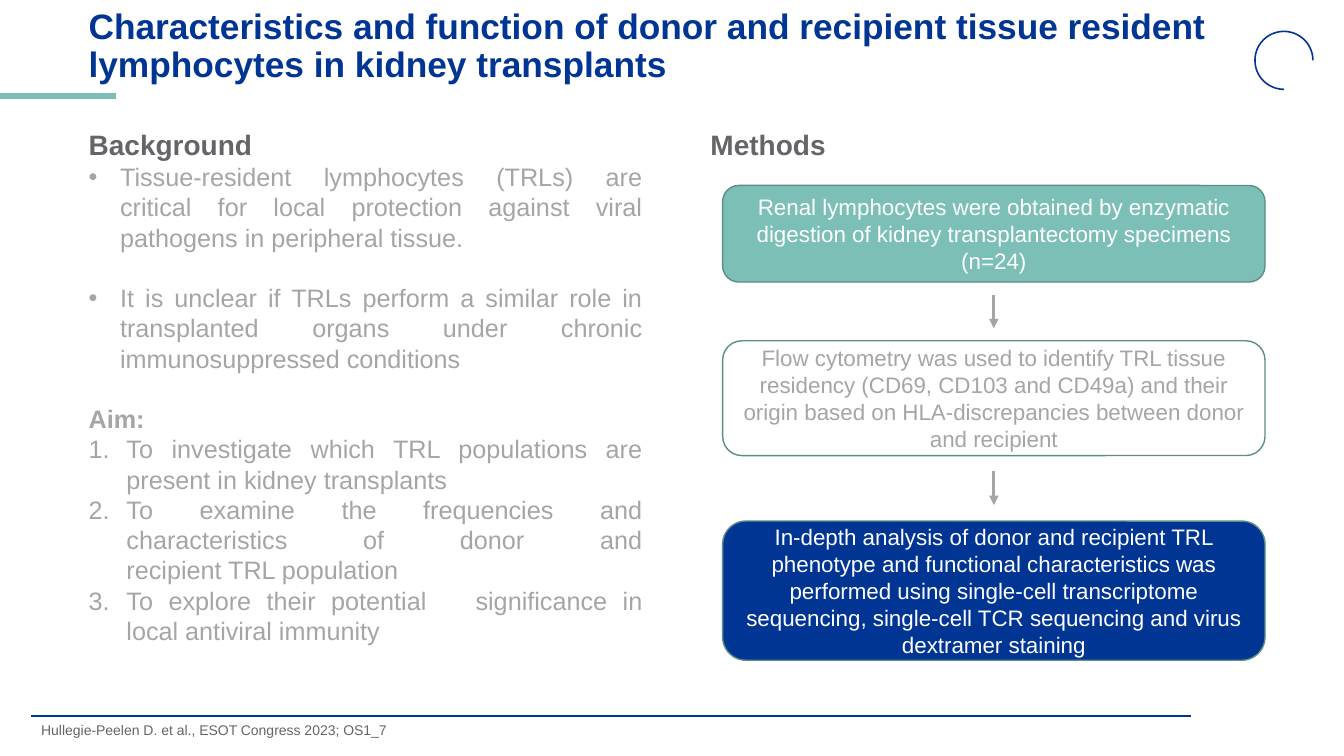
from lxml import etree
from pptx import Presentation
from pptx.dml.color import RGBColor
from pptx.enum.shapes import MSO_CONNECTOR, MSO_SHAPE
from pptx.enum.text import MSO_ANCHOR, PP_ALIGN
from pptx.oxml.ns import qn
from pptx.util import Pt

STRAIGHT = MSO_CONNECTOR.STRAIGHT
ARC, ROUNDED = MSO_SHAPE.ARC, MSO_SHAPE.ROUNDED_RECTANGLE
TOP, MIDDLE = MSO_ANCHOR.TOP, MSO_ANCHOR.MIDDLE
LEFT, CENTER, JUSTIFY = PP_ALIGN.LEFT, PP_ALIGN.CENTER, PP_ALIGN.JUSTIFY

NAVY, TEAL, EDGE = "003594", "7CBFB6", "5C8D87"
DARK, GREY, WHITE = "636569", "A5A5A5", "FFFFFF"

HEADING = {"size": Pt(20), "bold": True}
BODY = {"size": Pt(18), "bold": False}
BLANK_LINE = 21.6

# text, bullet kind, hanging indent, space before
BACKGROUND = [
    ("Tissue-resident lymphocytes (TRLs) are critical for local protection "
     "against viral pathogens in peripheral tissue.", "dot", 22.5, 0),
    ("It is unclear if TRLs perform a similar role in transplanted organs "
     "under chronic immunosuppressed conditions", "dot", 22.5, BLANK_LINE),
    ("Aim:", None, 0, BLANK_LINE),
    ("To investigate which TRL populations are present in kidney transplants",
     "number", 27, 0),
    ("To examine the frequencies and characteristics of donor and\v"
     "recipient TRL population", "number", 27, 0),
    ("To explore their potential \tsignificance in local antiviral immunity",
     "number", 27, 0),
]

# text, top, height, fill, text colour
METHODS = [
    ("Renal lymphocytes were obtained by enzymatic digestion of kidney "
     "transplantectomy specimens (n=24)", 132.5, 69, TEAL, WHITE),
    ("Flow cytometry was used to identify TRL tissue residency (CD69, CD103 "
     "and CD49a) and their origin based on HLA-discrepancies between donor "
     "and recipient", 243.4, 82, None, GREY),
    ("In-depth analysis of donor and recipient TRL phenotype and functional "
     "characteristics was performed using single-cell transcriptome "
     "sequencing, single-cell TCR sequencing and virus dextramer staining",
     372.2, 99.4, NAVY, WHITE),
]


def rgb(value):
    return RGBColor.from_string(value)


def write(p, text, color, fmt, align=LEFT):
    p.text = text
    p.alignment = align
    for r in p.runs:
        r.font.name = "Arial"
        r.font.color.rgb = rgb(color)
        for name, value in fmt.items():
            setattr(r.font, name, value)


def add_text(s, box, text, color, fmt, anchor=TOP):
    tf = s.shapes.add_textbox(*map(Pt, box)).text_frame
    tf.word_wrap = True
    tf.vertical_anchor = anchor
    write(tf.paragraphs[0], text, color, fmt)
    return tf


def add_line(s, start, end, color, width, arrow=False):
    line = s.shapes.add_connector(STRAIGHT, *map(Pt, start + end))
    line.line.color.rgb = rgb(color)
    line.line.width = Pt(width)
    if arrow:
        etree.SubElement(line.line._get_or_add_ln(), qn("a:tailEnd"), type="triangle")
    etree.SubElement(line._element.spPr, qn("a:effectLst"))


def add_outlined(s, kind, box, fill, color, width):
    sp = s.shapes.add_shape(kind, *map(Pt, box))
    sp.shadow.inherit = False
    if fill:
        sp.fill.solid()
        sp.fill.fore_color.rgb = rgb(fill)
    else:
        sp.fill.background()
    sp.line.color.rgb = rgb(color)
    sp.line.width = Pt(width)
    return sp


def add_bullet(p, kind, indent):
    pPr = p._p.get_or_add_pPr()
    pPr.set("marL", str(Pt(indent)))
    pPr.set("indent", str(-Pt(indent)))
    if kind == "dot":
        etree.SubElement(pPr, qn("a:buFont"), typeface="Arial")
        etree.SubElement(pPr, qn("a:buChar"), char="•")
    else:
        etree.SubElement(pPr, qn("a:buAutoNum"), type="arabicPeriod")


def header(s, box, title):
    left, top, width, height = box
    tf = add_text(s, box, title, NAVY, {"size": Pt(25.2), "bold": True}, MIDDLE)
    tf.paragraphs[0].line_spacing = 0.9
    add_line(s, (0, 68.4), (82.8, 68.4), TEAL, 4.5)
    # Three-quarter ring, open at the lower right
    ring = add_outlined(s, ARC, (left + width + 12.2, top + 15.2, 41.4, 41.4),
                        None, NAVY, 1.13)
    ring.adjustments[0], ring.adjustments[1] = 54, 0


def background_column(s, box):
    tf = add_text(s, box, "Background", DARK, HEADING)
    for text, kind, indent, before in BACKGROUND:
        p = tf.add_paragraph()
        if before:
            p.space_before = Pt(before)
        if kind:
            add_bullet(p, kind, indent)
        write(p, text, GREY, {**BODY, "bold": kind is None}, JUSTIFY)


def methods_column(s, box):
    left, top, width, height = box
    add_text(s, (left, top, 108, 31.7), "Methods", DARK, HEADING)
    step_left, step_width = left + 15.8, width - 15.8
    for text, y, h, fill, color in METHODS:
        sp = add_outlined(s, ROUNDED, (step_left, y, step_width, h), fill, EDGE, 1)
        tf = sp.text_frame
        tf.word_wrap = True
        tf.vertical_anchor = MIDDLE
        write(tf.paragraphs[0], text, color, {"size": Pt(16)}, CENTER)
    # Arrows centred in the gaps between steps
    x = step_left + step_width / 2
    for upper, lower in zip(METHODS, METHODS[1:]):
        middle = (upper[1] + upper[2] + lower[1]) / 2
        add_line(s, (x, middle - 12), (x, middle + 12), GREY, 2.25, arrow=True)


def footer(s, box, citation):
    left, top, width, height = box
    add_line(s, (left, top - 0.8), (851, top - 0.8), NAVY, 1.5)
    add_text(s, box, citation, DARK, {"size": Pt(10)})


def main():
    prs = Presentation()
    prs.slide_width, prs.slide_height = Pt(960), Pt(540)
    s = prs.slides.add_slide(prs.slide_layouts[6])
    header(s, (56.2, 7.2, 828, 52.6),
           "Characteristics and function of donor and recipient tissue resident "
           "lymphocytes in kidney transplants")
    background_column(s, (56.2, 87.8, 409.7, 380.2))
    methods_column(s, (500.4, 87.8, 403.2, 384))
    footer(s, (22.3, 512, 564.5, 24.5),
           "Hullegie-Peelen D. et al., ESOT Congress 2023; OS1_7")
    prs.save("out.pptx")


if __name__ == "__main__":
    main()
